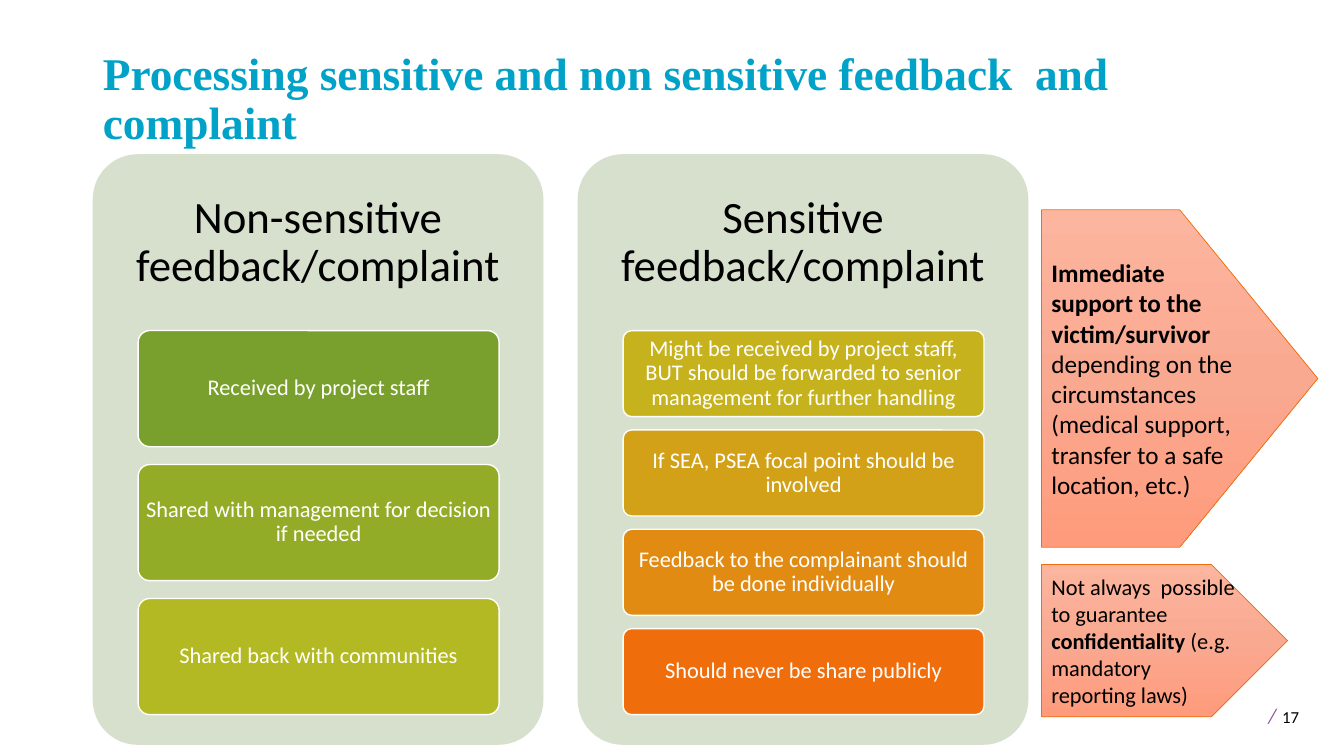
from lxml.etree import SubElement
from pptx import Presentation
from pptx.dml.color import RGBColor
from pptx.enum.shapes import MSO_SHAPE
from pptx.enum.text import MSO_ANCHOR, MSO_AUTO_SIZE, PP_ALIGN
from pptx.oxml.ns import qn
from pptx.util import Inches, Pt

# Content: text runs are (text, format name)
TITLE = "Processing sensitive and non sensitive feedback  and complaint"
PANELS = [
    ("Non-sensitive feedback/complaint", [
        ("Received by project staff", "79A02C"),
        ("Shared with management for decision if needed", "93AC28"),
        ("Shared back with communities", "B3B923"),
    ]),
    ("Sensitive feedback/complaint", [
        ("Might be received by project staff, BUT should be forwarded "
         "to senior management for further handling", "C6B21D"),
        ("If SEA, PSEA focal point should be involved", "D3A118"),
        ("Feedback to the complainant should be done individually", "E18B12"),
        ("Should never be share publicly", "EF6E0B"),
    ]),
]
ARROWS = [
    ((10.33, 2.08, 2.74, 3.35), [
        ("Immediate support to the victim/survivor ", "support_bold"),
        ("depending on the circumstances (medical support, transfer to a "
         "safe location, etc.)", "support"),
    ]),
    ((10.33, 5.6, 2.44, 1.51), [
        ("Not always  possible to guarantee ", "limit"),
        ("confidentiality", "limit_bold"),
        (" (e.g. mandatory reporting laws)", "limit"),
    ]),
]
PAGE_NUMBER = [("/", "slash"), (" ", "support"), ("17", "page")]

# Theme
THEME = {
    "panel": "D7DFCD",
    "step_line": "FFFFFF",
    "arrow_line": "EF6E0B",
    "arrow_stops": [(0, "FCB59E"), (50, "FAA991"), (100, "FE9B7C")],
    "fonts": {
        "title": {"name": "Times New Roman", "size": Pt(32.4), "bold": True, "color": "00A2C7"},
        "heading": {"size": Pt(32), "color": "000000"},
        "step": {"size": Pt(16), "color": "FFFFFF"},
        "support": {"size": Pt(18), "color": "000000"},
        "support_bold": {"size": Pt(18), "bold": True, "color": "000000"},
        "limit": {"size": Pt(16), "color": "000000"},
        "limit_bold": {"size": Pt(16), "bold": True, "color": "000000"},
        "slash": {"size": Pt(15), "italic": True, "color": "9053A1"},
        "page": {"size": Pt(12), "color": "000000"},
    },
}

# Layout in inches
PANEL_LEFT, PANEL_TOP, PANEL_WIDTH, PANEL_HEIGHT = 0.92, 1.53, 4.47, 5.86
PANEL_PITCH = 4.81
HEADING_HEIGHT = 1.76
STEP_INDENT, STEP_WIDTH = 0.45, 3.58
STEPS_TOP, STEPS_HEIGHT = 3.28, 3.81
GAP_RATIO = 1 / 6.5  # gap between steps, as a share of step height


def write(shape, runs, insets=(0.1, 0.05, 0.1, 0.05), align=PP_ALIGN.LEFT,
          anchor=MSO_ANCHOR.MIDDLE, spacing=1.0):
    frame = shape.text_frame
    left, top, right, bottom = map(Inches, insets)
    frame_format = {
        "word_wrap": True, "auto_size": MSO_AUTO_SIZE.NONE, "vertical_anchor": anchor,
        "margin_left": left, "margin_top": top, "margin_right": right, "margin_bottom": bottom,
    }
    for key, value in frame_format.items():
        setattr(frame, key, value)
    paragraph = frame.paragraphs[0]
    paragraph.alignment = align
    paragraph.line_spacing = spacing
    for text, style in runs:
        run = paragraph.add_run()
        run.text = text
        font_format = {"name": "Calibri", "bold": False, "italic": False, **THEME["fonts"][style]}
        color = font_format.pop("color")
        for key, value in font_format.items():
            setattr(run.font, key, value)
        run.font.color.rgb = RGBColor.from_string(color)


def add_shape(slide, kind, box, fill=None, line=None, line_width=1):
    shape = slide.shapes.add_shape(kind, *map(Inches, box))
    shape.shadow.inherit = False
    if fill:
        shape.fill.solid()
        shape.fill.fore_color.rgb = RGBColor.from_string(fill)
    if line:
        shape.line.color.rgb = RGBColor.from_string(line)
        shape.line.width = Pt(line_width)
    else:
        shape.line.fill.background()
    return shape


def add_rounded(slide, box, fill, line=None):
    shape = add_shape(slide, MSO_SHAPE.ROUNDED_RECTANGLE, box, fill, line)
    shape.adjustments[0] = 0.1
    return shape


def add_panel(slide, left, heading, steps):
    add_rounded(slide, (left, PANEL_TOP, PANEL_WIDTH, PANEL_HEIGHT), THEME["panel"])
    heading_box = slide.shapes.add_textbox(
        *map(Inches, (left, PANEL_TOP, PANEL_WIDTH, HEADING_HEIGHT)))
    write(heading_box, [(heading, "heading")], (0.13,) * 4, PP_ALIGN.CENTER, spacing=0.9)

    count = len(steps)
    height = STEPS_HEIGHT / (count + (count - 1) * GAP_RATIO)
    for index, (text, color) in enumerate(steps):
        top = STEPS_TOP + index * height * (1 + GAP_RATIO)
        step = add_rounded(slide, (left + STEP_INDENT, top, STEP_WIDTH, height),
                           color, THEME["step_line"])
        write(step, [(text, "step")], (0.04, 0.03, 0.04, 0.03), PP_ALIGN.CENTER, spacing=0.9)


def add_arrow(slide, box, runs):
    arrow = add_shape(slide, MSO_SHAPE.PENTAGON, box, line=THEME["arrow_line"], line_width=0.5)
    arrow.fill.gradient()
    arrow.fill.gradient_angle = 270  # top to bottom
    stops = arrow.element.spPr.find(".//" + qn("a:gsLst"))
    for stop in list(stops):
        stops.remove(stop)
    for percent, color in THEME["arrow_stops"]:
        stop = SubElement(stops, qn("a:gs"), pos=str(percent * 1000))
        SubElement(stop, qn("a:srgbClr"), val=color)
    write(arrow, runs)


def main():
    deck = Presentation()
    deck.slide_width, deck.slide_height = Inches(13.33), Inches(7.5)
    slide = deck.slides.add_slide(deck.slide_layouts[5])

    # Title
    title = slide.shapes.title
    title.left, title.top, title.width, title.height = map(Inches, (0.92, 0.4, 11.5, 1.13))
    write(title, [(TITLE, "title")], anchor=MSO_ANCHOR.BOTTOM, spacing=0.9)

    # Panels with their steps
    for index, (heading, steps) in enumerate(PANELS):
        add_panel(slide, PANEL_LEFT + index * PANEL_PITCH, heading, steps)

    # Arrow notes
    for box, runs in ARROWS:
        add_arrow(slide, box, runs)

    # Page number
    page = slide.shapes.add_textbox(*map(Inches, (12.43, 6.88, 0.87, 0.4)))
    write(page, PAGE_NUMBER, (0.15, 0.05, 0.1, 0.05), anchor=MSO_ANCHOR.TOP)

    deck.save("out.pptx")


if __name__ == "__main__":
    main()
